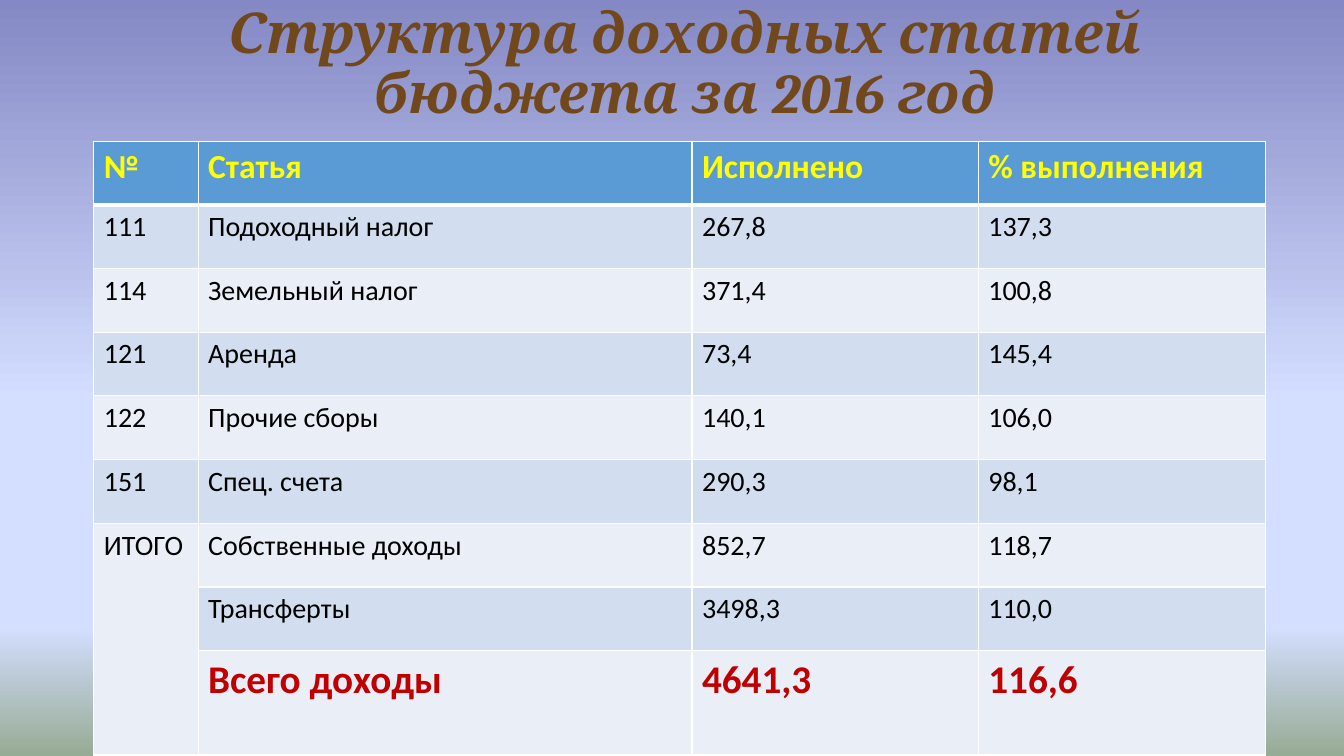
"""Build the slide with the 2016 budget revenue table."""
from copy import deepcopy

from lxml.etree import SubElement
from pptx import Presentation
from pptx.dml.color import RGBColor
from pptx.enum.text import MSO_ANCHOR, MSO_AUTO_SIZE, PP_ALIGN
from pptx.oxml.ns import qn
from pptx.util import Pt

BROWN = RGBColor(0x71, 0x48, 0x1C)
YELLOW = RGBColor(0xFF, 0xFF, 0x00)
BLACK = RGBColor(0x00, 0x00, 0x00)
RED = RGBColor(0xC0, 0x00, 0x00)
WHITE = RGBColor(0xFF, 0xFF, 0xFF)
HEADER_BLUE = RGBColor(0x5B, 0x9B, 0xD5)
BAND_DARK = RGBColor(0xD2, 0xDE, 0xEF)
BAND_LIGHT = RGBColor(0xEA, 0xEF, 0xF7)
SKY_TOP = RGBColor(0x84, 0x88, 0xC4)
SKY_PALE = RGBColor(0xD4, 0xDE, 0xFF)
GRASS = RGBColor(0x96, 0xAB, 0x94)

BACKGROUND_STOPS = [(0, SKY_TOP), (0.53, SKY_PALE), (0.83, SKY_PALE), (1, GRASS)]
COLUMN_WIDTHS = [74.5, 352.8, 204.5, 205.2]
ROW_HEIGHTS = [45.5] * 8 + [74.5]
ROWS = [
    ("№", "Статья", "Исполнено", "% выполнения"),
    ("111", "Подоходный налог", "267,8", "137,3"),
    ("114", "Земельный налог", "371,4", "100,8"),
    ("121", "Аренда", "73,4", "145,4"),
    ("122", "Прочие сборы", "140,1", "106,0"),
    ("151", "Спец. счета", "290,3", "98,1"),
    ("ИТОГО", "Собственные доходы", "852,7", "118,7"),
    ("", "Трансферты", "3498,3", "110,0"),
    ("", "Всего доходы", "4641,3", "116,6"),
]
LAST_ROW = len(ROWS) - 1


def style_font(font, name, size, color, bold):
    font.name = name
    font.size = Pt(size)
    font.color.rgb = color
    font.bold = bold


def add_border(cell, side, width):
    line = SubElement(cell._tc.get_or_add_tcPr(), qn(f"a:ln{side}"), w=str(Pt(width)))
    fill = SubElement(line, qn("a:solidFill"))
    SubElement(fill, qn("a:srgbClr"), val=str(WHITE))


presentation = Presentation()
presentation.slide_width = Pt(960)
presentation.slide_height = Pt(540)
slide = presentation.slides.add_slide(presentation.slide_layouts[5])

background = slide.background.fill
background.gradient()
background.gradient_angle = 270
stop_list = next(slide.element.iter(qn("a:gsLst")))
while len(stop_list) < len(BACKGROUND_STOPS):
    stop_list.append(deepcopy(stop_list[0]))
for stop, (position, color) in zip(background.gradient_stops, BACKGROUND_STOPS):
    stop.position = position
    stop.color.rgb = color

title = slide.shapes.title
title.left, title.top, title.width, title.height = Pt(75.6), Pt(0), Pt(827.3), Pt(126)
title_frame = title.text_frame
title_frame.text = "Структура доходных статей бюджета за 2016 год"
title_frame.word_wrap = True
title_frame.auto_size = MSO_AUTO_SIZE.NONE
title_frame.vertical_anchor = MSO_ANCHOR.TOP
paragraph = title_frame.paragraphs[0]
paragraph.alignment = PP_ALIGN.CENTER
paragraph.line_spacing = 0.9
title_font = paragraph.runs[0].font
style_font(title_font, "Cambria", 40, BROWN, True)
title_font.italic = True

table = slide.shapes.add_table(
    len(ROWS), len(COLUMN_WIDTHS), Pt(67), Pt(100.8),
    Pt(sum(COLUMN_WIDTHS)), Pt(sum(ROW_HEIGHTS))).table
for column, width in zip(table.columns, COLUMN_WIDTHS):
    column.width = Pt(width)
for row, height in zip(table.rows, ROW_HEIGHTS):
    row.height = Pt(height)

for row_index, values in enumerate(ROWS):
    if row_index == 0:
        size, color, bold, band = 24, YELLOW, True, HEADER_BLUE
    else:
        size, color, bold = (28, RED, True) if row_index == LAST_ROW else (20, BLACK, False)
        band = BAND_DARK if row_index % 2 else BAND_LIGHT
    for column_index, value in enumerate(values):
        cell = table.cell(row_index, column_index)
        add_border(cell, "L", 1)
        add_border(cell, "R", 1)
        add_border(cell, "T", 3 if row_index == 1 else 1)
        add_border(cell, "B", 3 if row_index == 0 else 1)
        cell.fill.solid()
        cell.fill.fore_color.rgb = BAND_LIGHT if row_index > 5 and column_index == 0 else band
        if value:
            cell.text = value
            style_font(cell.text_frame.paragraphs[0].runs[0].font, "Calibri", size, color, bold)
table.cell(6, 0).merge(table.cell(LAST_ROW, 0))

presentation.save("out.pptx")
